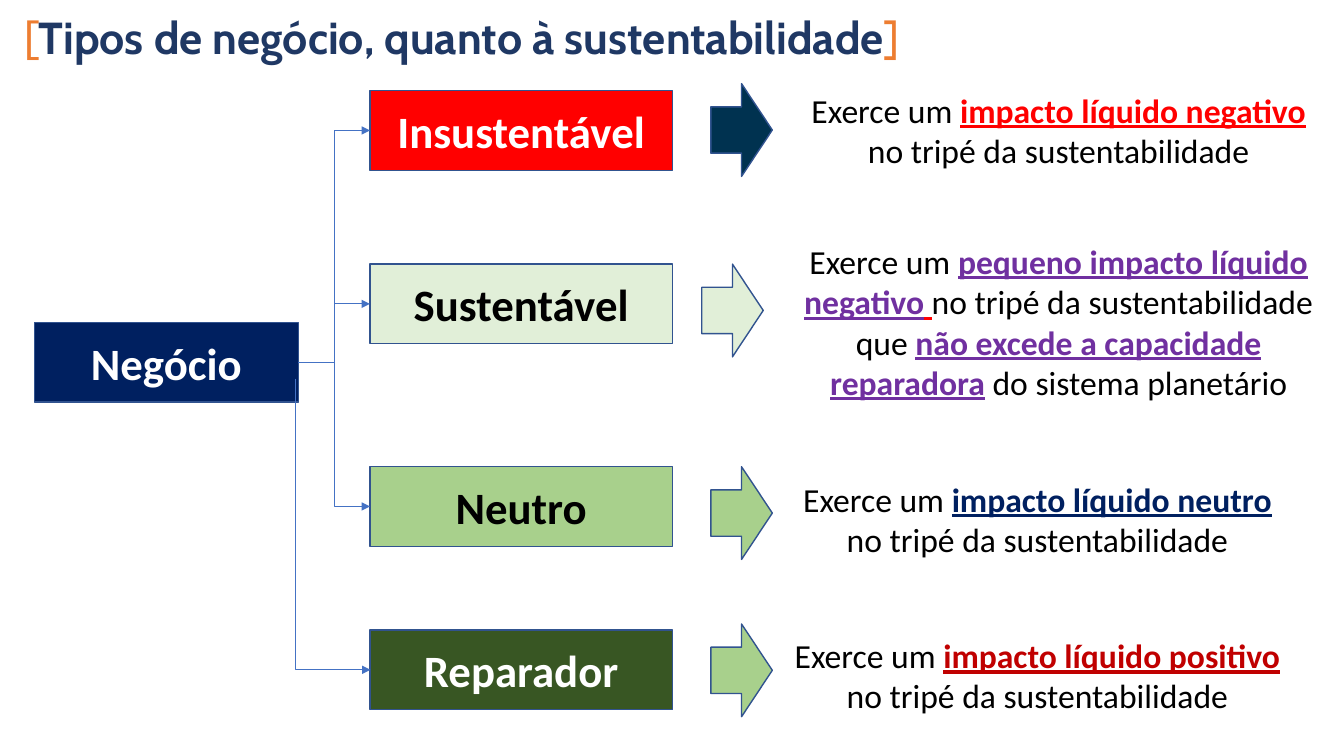
from dataclasses import dataclass

from lxml import etree
from pptx import Presentation, util as u
from pptx.dml import color
from pptx.enum import shapes, text
from pptx.oxml import ns

OUTLINE, LINK = "31538F", "4472C4"
BOX_LEFT, BOX_WIDTH, BOX_HEIGHT = 3.67, 3, 0.79


@dataclass
class Span:
    """A stretch of text with its colour and emphasis."""
    words: str
    tint: str = "000000"
    bold: bool = False
    underline: bool = False


@dataclass
class Category:
    """A type of business with its box, arrow and explanation."""
    label: str
    top: float
    fill: str
    ink: str
    arrow_at: tuple[float, float]
    arrow_fill: str
    text_at: tuple[float, float]
    text_height: float
    spans: list[Span]


def rgb(value: str) -> color.RGBColor:
    """Turn a hex string into a colour."""
    return color.RGBColor.from_string(value)


def impact(words: str, tint: str) -> list[Span]:
    """Describe a net impact on the sustainability tripod."""
    return [Span("Exerce um "), Span(words + " ", tint, True, True),
            Span("no tripé da sustentabilidade")]


def write(paragraph, spans: list[Span], font: str, size: float) -> None:
    """Write spans into a paragraph in one font and size."""
    paragraph.font.name, paragraph.font.size = font, u.Pt(size)
    for span in spans:
        run = paragraph.add_run()
        run.text = span.words
        run.font.bold, run.font.underline = span.bold, span.underline
        run.font.color.rgb = rgb(span.tint)


def add_figure(slide, kind, left: float, top: float, width: float, height: float, fill: str):
    """Draw a filled and outlined preset shape."""
    figure = slide.shapes.add_shape(kind, *map(u.Inches, (left, top, width, height)))
    figure.shadow.inherit = False
    figure.fill.solid()
    figure.fill.fore_color.rgb = rgb(fill)
    figure.line.color.rgb = rgb(OUTLINE)
    figure.line.width = u.Pt(1)
    return figure


def add_box(slide, label: str, left: float, top: float, width: float, fill: str, ink: str):
    """Draw a labelled box."""
    box = add_figure(slide, shapes.MSO_SHAPE.RECTANGLE, left, top, width, BOX_HEIGHT, fill)
    box.text_frame.vertical_anchor = text.MSO_ANCHOR.MIDDLE
    paragraph = box.text_frame.paragraphs[0]
    paragraph.alignment = text.PP_ALIGN.CENTER
    write(paragraph, [Span(label, ink, True)], "Calibri", 32)
    return box


def add_link(slide, start: tuple[float, float], end: tuple[float, float]):
    """Draw an elbow connector with an arrowhead."""
    link = slide.shapes.add_connector(shapes.MSO_CONNECTOR.ELBOW, *map(u.Inches, start + end))
    link.line.color.rgb = rgb(LINK)
    link.line.width = u.Pt(0.75)
    etree.SubElement(link.line._get_or_add_ln(), ns.qn("a:tailEnd"), type="triangle")
    etree.SubElement(link._element.spPr, ns.qn("a:effectLst"))
    return link


def add_outer_link(slide) -> None:
    """Draw the single-bend link that runs down to the last box."""
    link = add_link(slide, (4.75, 4.83), (1.86, 5.57))
    link._element.spPr.find(ns.qn("a:prstGeom")).set("prst", "bentConnector2")
    link._element.spPr.find(ns.qn("a:xfrm")).set("rot", str(270 * 60000))


def add_explanation(slide, category: Category) -> None:
    """Write the explanation beside a category."""
    left, top = category.text_at
    frame = slide.shapes.add_textbox(
        *map(u.Inches, (left, top, 5.26, category.text_height))).text_frame
    frame.word_wrap = True
    frame.auto_size = text.MSO_AUTO_SIZE.SHAPE_TO_FIT_TEXT
    paragraph = frame.paragraphs[0]
    paragraph.alignment = text.PP_ALIGN.CENTER
    write(paragraph, category.spans, "Calibri", 24)


def add_title(slide) -> None:
    """Place and format the slide title."""
    title = slide.shapes.title
    title.left, title.top, title.width, title.height = map(u.Inches, (0.14, 0.05, 9.46, 0.64))
    frame = title.text_frame
    frame.word_wrap = True
    frame.auto_size = text.MSO_AUTO_SIZE.SHAPE_TO_FIT_TEXT
    frame.vertical_anchor = text.MSO_ANCHOR.TOP
    paragraph = frame.paragraphs[0]
    paragraph.alignment = text.PP_ALIGN.LEFT
    write(paragraph, [
        Span("[", "ED7D31"),
        Span("Tipos de negócio, quanto à sustentabilidade", "1F3864", True),
        Span("]", "ED7D31"),
    ], "Cabin", 32)


CATEGORIES = [
    Category("Insustentável", 0.9, "FF0000", "FFFFFF", (7.05, 0.83), "003250",
             (7.87, 0.84), 0.91, impact("impacto líquido negativo", "FF0000")),
    Category("Sustentável", 2.62, "E1EFD8", "000000", (6.96, 2.62), "E1EFD8",
             (7.87, 2.34), 1.72, [
                 Span("Exerce um "),
                 Span("pequeno impacto líquido negativo", "7030A0", True, True),
                 Span(" ", "FF0000", True, True),
                 Span("no tripé da sustentabilidade que "),
                 Span("não excede a capacidade reparadora", "7030A0", True, True),
                 Span(" do sistema planetário")]),
    Category("Neutro", 4.63, "A8D08C", "000000", (7.05, 4.63), "A8D08C",
             (7.66, 4.7), 0.91, impact("impacto líquido neutro", "002060")),
    Category("Reparador", 6.25, "385623", "FFFFFF", (7.05, 6.19), "A8D08C",
             (7.66, 6.25), 0.91, impact("impacto líquido positivo", "C00000")),
]


def main() -> None:
    """Build and save the slide."""
    deck = Presentation()
    deck.slide_width, deck.slide_height = u.Inches(13.33), u.Inches(7.5)
    slide = deck.slides.add_slide(deck.slide_layouts[5])
    add_title(slide)
    business = add_box(slide, "Negócio", 0.34, 3.2, 2.62, "002060", "FFFFFF")
    for category in CATEGORIES:
        box = add_box(slide, category.label, BOX_LEFT, category.top, BOX_WIDTH,
                      category.fill, category.ink)
        add_explanation(slide, category)
        add_figure(slide, shapes.MSO_SHAPE.RIGHT_ARROW, *category.arrow_at, 0.61, 0.92,
                   category.arrow_fill)
        if category is CATEGORIES[-1]:
            add_outer_link(slide)
        else:
            link = add_link(slide, (2.96, 3.6), (BOX_LEFT, category.top + BOX_HEIGHT / 2))
            link.begin_connect(business, 3)
            link.end_connect(box, 1)
    deck.save("out.pptx")


if __name__ == "__main__":
    main()
